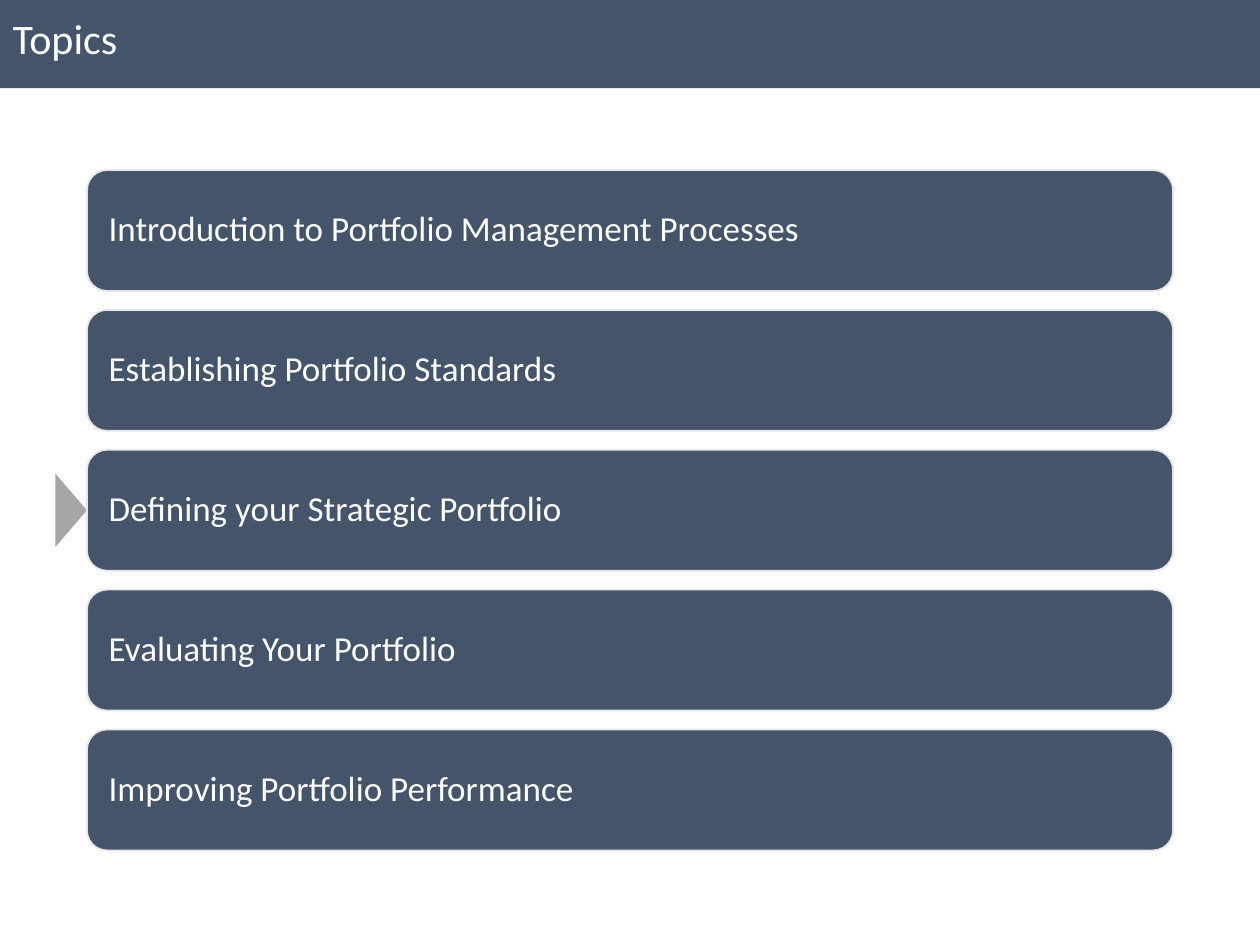
"""Build a topics slide with stacked bars and a marker on the current one."""
from dataclasses import dataclass

from pptx import Presentation
from pptx.dml.color import RGBColor
from pptx.enum import shapes, text
from pptx.util import Pt

NAVY, GREY, PALE, WHITE = "44546A", "A6A6A6", "E7E6E6", "FFFFFF"
FONT = "Calibri"
BAR_LEFT, BAR_TOP, BAR_WIDTH, BAR_HEIGHT, BAR_PITCH = 49.68, 97.2, 620.64, 69.12, 79.92
MARKER_WIDTH, MARKER_HEIGHT = 41.76, 18


@dataclass
class Topic:
    label: str
    current: bool = False


TOPICS = [
    Topic("Introduction to Portfolio Management Processes"),
    Topic("Establishing Portfolio Standards"),
    Topic("Defining your Strategic Portfolio", current=True),
    Topic("Evaluating Your Portfolio"),
    Topic("Improving Portfolio Performance"),
]


def set_fill(target, color: str) -> None:
    target.fill.solid()
    target.fill.fore_color.rgb = RGBColor.from_string(color)


def write(shape, label: str, size: float, inset: float, anchor, spacing: float = 1.0) -> None:
    frame = shape.text_frame
    frame.word_wrap = True
    frame.auto_size = text.MSO_AUTO_SIZE.NONE
    frame.vertical_anchor = anchor
    frame.margin_left = frame.margin_right = Pt(inset)
    frame.margin_top = frame.margin_bottom = Pt(7.2)
    paragraph = frame.paragraphs[0]
    paragraph.alignment = text.PP_ALIGN.LEFT
    paragraph.line_spacing = spacing
    run = paragraph.add_run()
    run.text = label
    run.font.name = FONT
    run.font.size = Pt(size)
    set_fill(run.font, WHITE)


def add_title(slide, label: str) -> None:
    title = slide.shapes.title
    title.left, title.top, title.width, title.height = Pt(0), Pt(0), Pt(720), Pt(50.4)
    set_fill(title, NAVY)
    write(title, label, 24, 7.2, text.MSO_ANCHOR.TOP)


def add_marker(slide, middle: float) -> None:
    center = BAR_LEFT - MARKER_HEIGHT / 2
    marker = slide.shapes.add_shape(
        shapes.MSO_SHAPE.ISOSCELES_TRIANGLE,
        Pt(center - MARKER_WIDTH / 2), Pt(middle - MARKER_HEIGHT / 2),
        Pt(MARKER_WIDTH), Pt(MARKER_HEIGHT))
    marker.rotation = 90
    marker.shadow.inherit = False
    set_fill(marker, GREY)
    marker.line.fill.background()


def add_bar(slide, topic: Topic, top: float) -> None:
    bar = slide.shapes.add_shape(
        shapes.MSO_SHAPE.ROUNDED_RECTANGLE,
        Pt(BAR_LEFT), Pt(top), Pt(BAR_WIDTH), Pt(BAR_HEIGHT))
    bar.shadow.inherit = False
    set_fill(bar, NAVY)
    set_fill(bar.line, PALE)
    bar.line.width = Pt(1)
    write(bar, topic.label, 20, 9, text.MSO_ANCHOR.MIDDLE, 0.9)


def main() -> None:
    presentation = Presentation()
    presentation.slide_width, presentation.slide_height = Pt(720), Pt(540)
    slide = presentation.slides.add_slide(presentation.slide_layouts[5])
    add_title(slide, "Topics")
    for index, topic in enumerate(TOPICS):
        top = BAR_TOP + index * BAR_PITCH
        if topic.current:
            add_marker(slide, top + BAR_HEIGHT / 2)
        add_bar(slide, topic, top)
    presentation.save("out.pptx")


if __name__ == "__main__":
    main()
